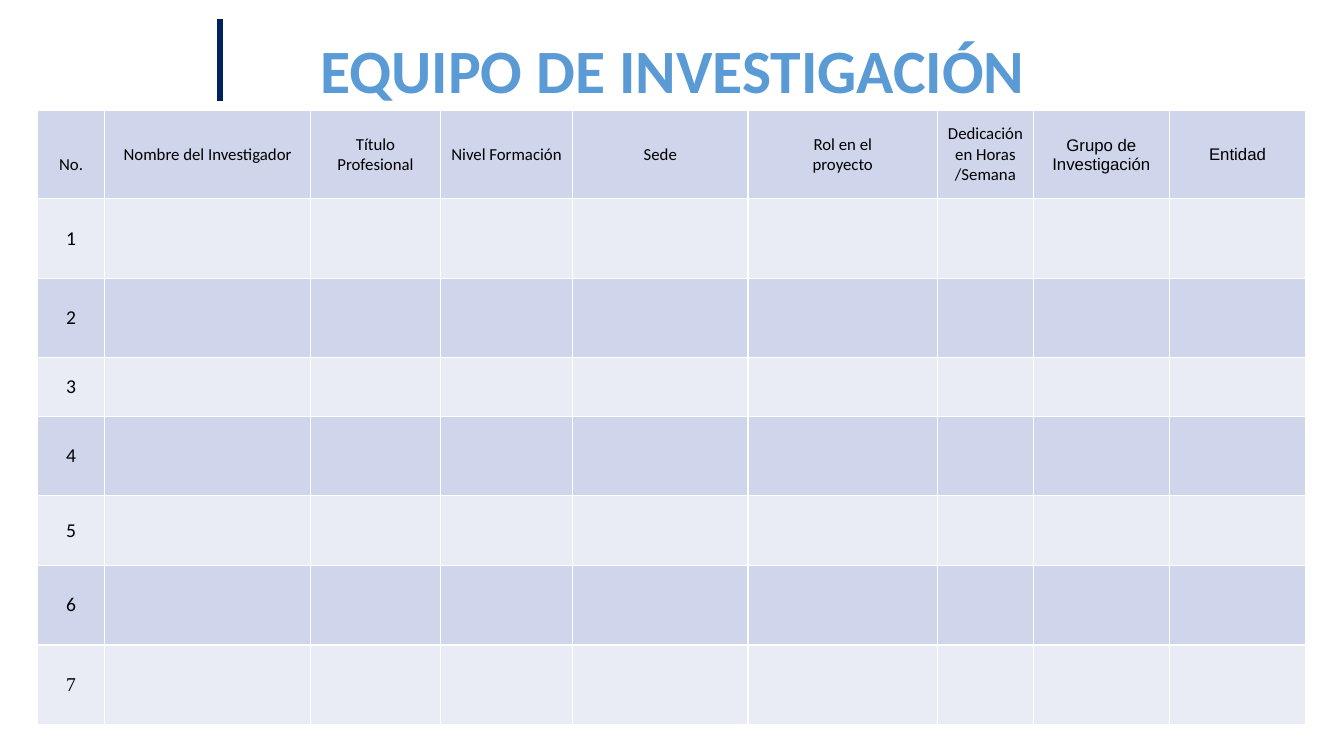
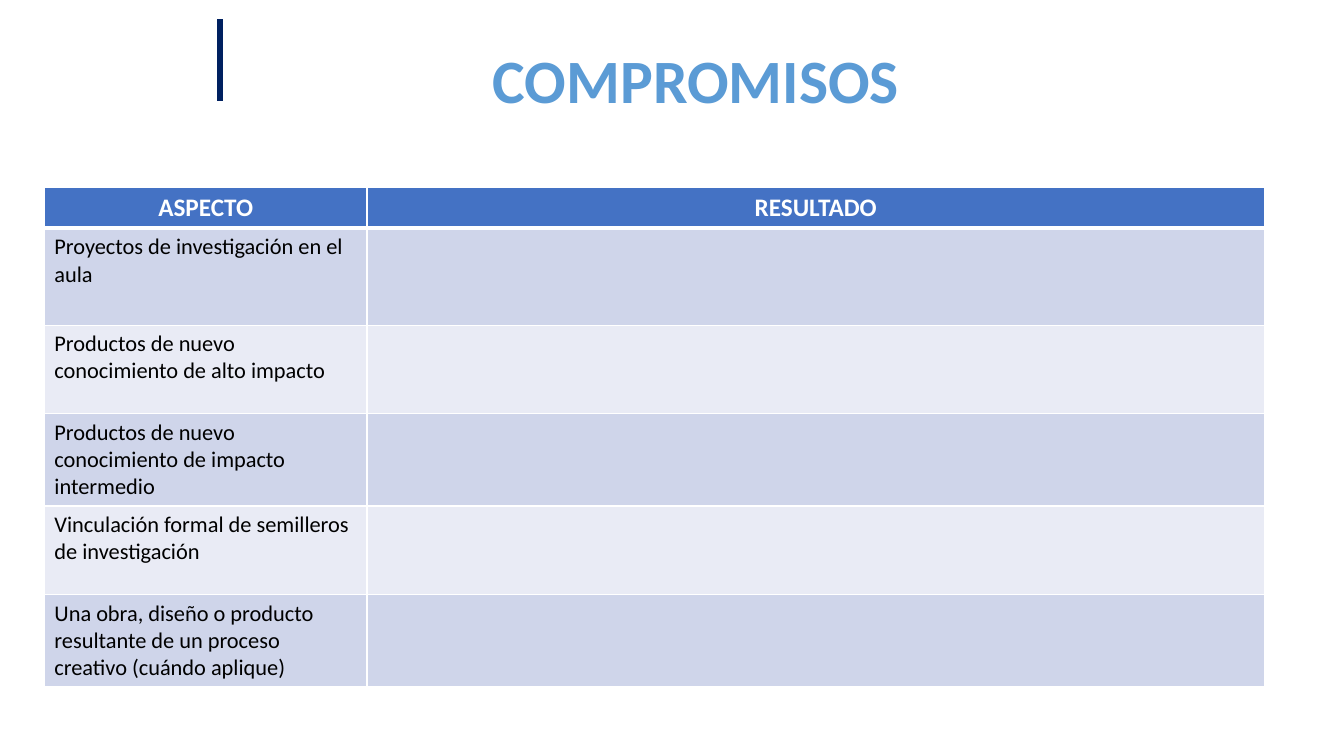
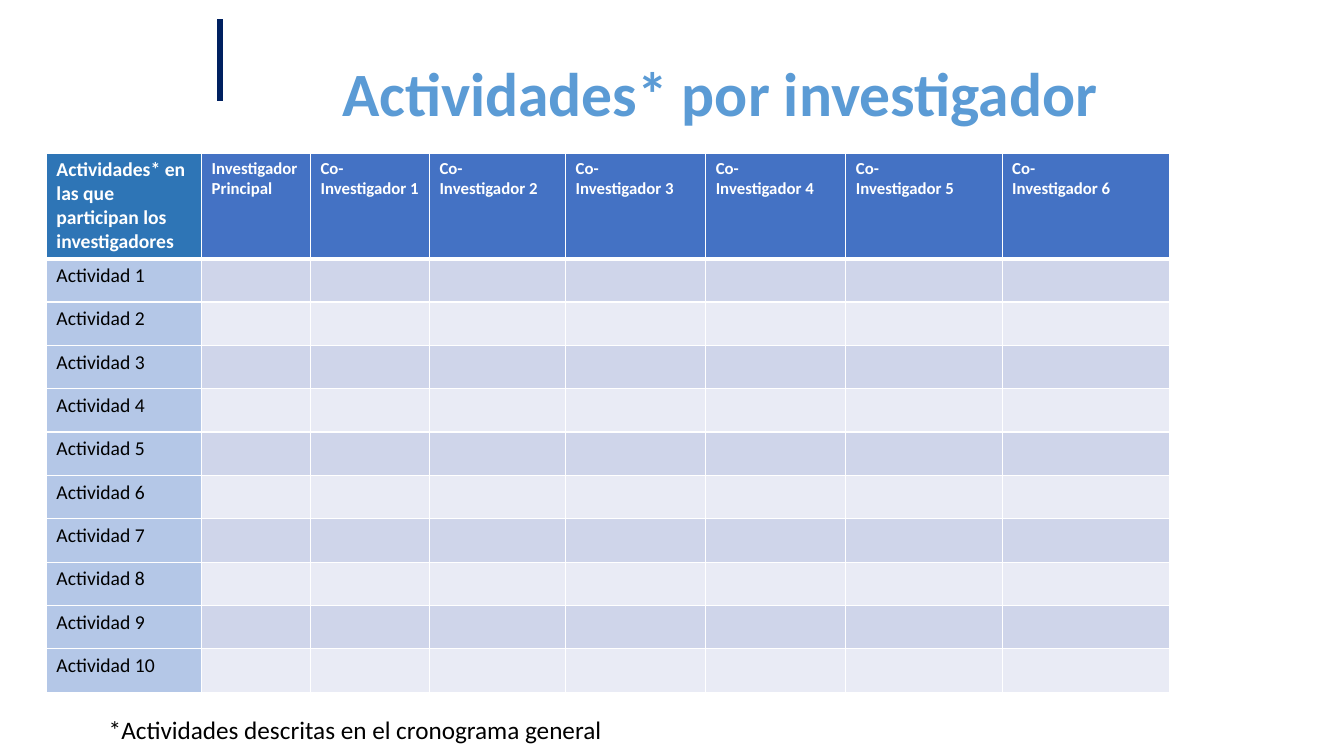
from lxml import etree
from pptx import Presentation
from pptx.dml.color import RGBColor
from pptx.enum.shapes import MSO_CONNECTOR
from pptx.enum.text import MSO_ANCHOR, MSO_AUTO_SIZE, PP_ALIGN
from pptx.oxml.ns import qn
from pptx.util import Inches, Pt

STRAIGHT = MSO_CONNECTOR.STRAIGHT
MIDDLE, TOP = MSO_ANCHOR.MIDDLE, MSO_ANCHOR.TOP
CENTER, LEFT = PP_ALIGN.CENTER, PP_ALIGN.LEFT
NO_AUTOSIZE = MSO_AUTO_SIZE.NONE

# Shared palette and text formats
WHITE, BLACK, NAVY, SKY = "FFFFFF", "000000", "002060", "5B9BD5"
BLUE, DEEP_BLUE, PALE_BLUE = "4472C4", "2E75B6", "B4C7E7"
DARK_BAND, LIGHT_BAND = "CFD5EA", "E9EBF5"
BODY = {"name": "Calibri", "size": Pt(14), "bold": False}
TITLE = {"name": "Calibri", "size": Pt(44), "bold": True}


def rgb(value):
    return RGBColor.from_string(value)


def write(frame, text, font_format, color, align=LEFT):
    """Write one paragraph per line of text and format its runs."""
    frame.text = text
    for paragraph in frame.paragraphs:
        paragraph.alignment = align
        for run in paragraph.runs:
            for attribute, value in font_format.items():
                setattr(run.font, attribute, value)
            run.font.color.rgb = rgb(color)


# Content of each slide; "special" holds font changes by (row, column)
team = {
    "title": "EQUIPO DE INVESTIGACIÓN",
    "title_box": (2.87, 0.26, 7.61, 0.84),
    "table_at": (0.37, 1.1),
    "columns": [0.67, 2.04, 1.29, 1.31, 1.74, 1.88, 0.95, 1.35, 1.35],
    "rows": [0.87, 0.79, 0.79, 0.58, 0.79, 0.69, 0.79, 0.79],
    "header": ["No.", "Nombre del Investigador", "Título Profesional",
               "Nivel Formación", "Sede", "Rol en el\nproyecto",
               "Dedicación en Horas /Semana", "Grupo de Investigación",
               "Entidad"],
    "labels": [str(number) for number in range(1, 8)],
    "header_font": {**BODY, "size": Pt(12)}, "header_color": BLACK,
    "header_fill": DARK_BAND, "header_rule": 1, "header_align": CENTER,
    "label_font": BODY, "label_align": CENTER,
    "bands": (LIGHT_BAND, DARK_BAND),
    "anchor": MIDDLE, "margins": (0.07, 0),
    "special": {(0, 7): {"name": "Arial"}, (0, 8): {"name": "Arial"},
                (7, 0): {"name": "Times New Roman"}},
    "fills": {},
}
commitments = {
    "title": "COMPROMISOS",
    "title_box": (3.1, 0.36, 7.61, 0.84),
    "table_at": (0.44, 1.86),
    "columns": [3.2, 8.9],
    "rows": [0.38, 0.96] + [0.88] * 4,
    "header": ["ASPECTO", "RESULTADO"],
    "labels": ["Proyectos de investigación en el aula",
               "Productos de nuevo conocimiento de alto impacto",
               "Productos de nuevo conocimiento de impacto intermedio",
               "Vinculación formal de semilleros de investigación",
               "Una obra, diseño o producto resultante de un proceso "
               "creativo (cuándo aplique)"],
    "header_font": {**BODY, "size": Pt(18), "bold": True},
    "header_color": WHITE,
    "header_fill": BLUE, "header_rule": 3, "header_align": CENTER,
    "label_font": {**BODY, "size": Pt(16)}, "label_align": LEFT,
    "bands": (DARK_BAND, LIGHT_BAND),
    "anchor": TOP, "margins": (0.1, 0.05),
    "special": {},
    "fills": {},
}
activities = {
    "title": "Actividades* por investigador",
    "title_box": (2.93, 0.49, 8.43, 0.84),
    "table_at": (0.46, 1.52),
    "columns": [1.54, 1.08, 1.18, 1.35, 1.39, 1.39, 1.55, 1.66],
    "rows": [0.85] + [0.43] * 10,
    "header": ["Actividades* en las que participan los investigadores",
               "Investigador Principal"]
              + [f"Co-\nInvestigador {number}" for number in range(1, 7)],
    "labels": [f"Actividad {number}" for number in range(1, 11)],
    "header_font": {**BODY, "size": Pt(12), "bold": True},
    "header_color": WHITE,
    "header_fill": BLUE, "header_rule": 3, "header_align": LEFT,
    "label_font": BODY, "label_align": LEFT,
    "bands": (DARK_BAND, LIGHT_BAND),
    "anchor": TOP, "margins": (0.1, 0.05),
    "special": {(0, 0): {"size": Pt(14)}},
    "fills": {(0, 0): DEEP_BLUE,
              **{(row, 0): PALE_BLUE for row in range(1, 11)}},
}

deck = Presentation()
deck.slide_width, deck.slide_height = Inches(13.33), Inches(7.5)
title_only = deck.slide_layouts[5]

for content in (team, commitments, activities):
    slide = deck.slides.add_slide(title_only)

    # Title with a thin white outline
    heading = slide.shapes.title
    heading.left, heading.top, heading.width, heading.height = map(
        Inches, content["title_box"])
    write(heading.text_frame, content["title"], TITLE, SKY, CENTER)
    heading.text_frame.auto_size = NO_AUTOSIZE
    run_format = heading.text_frame.paragraphs[0].runs[0].font
    outline = etree.Element(qn("a:ln"), w=str(Pt(0.75)))
    outline_fill = etree.SubElement(outline, qn("a:solidFill"))
    etree.SubElement(outline_fill, qn("a:srgbClr"), val=WHITE)
    heading.text_frame._txBody.find(".//" + qn("a:rPr")).insert(0, outline)

    # Table grid
    widths, heights = content["columns"], content["rows"]
    left, top = content["table_at"]
    table = slide.shapes.add_table(
        len(heights), len(widths), Inches(left), Inches(top),
        Inches(sum(widths)), Inches(sum(heights))).table
    for column, width in zip(table.columns, widths):
        column.width = Inches(width)
    for row, height in zip(table.rows, heights):
        row.height = Inches(height)

    # Cells: borders, fill and text
    for r in range(len(heights)):
        for c in range(len(widths)):
            cell = table.cell(r, c)
            rules = {"lnL": 1, "lnR": 1,
                     "lnT": content["header_rule"] if r == 1 else 1,
                     "lnB": content["header_rule"] if r == 0 else 1}
            cell_properties = cell._tc.get_or_add_tcPr()
            for side, points in rules.items():
                border = etree.SubElement(cell_properties, qn(f"a:{side}"),
                                          w=str(Pt(points)))
                border_fill = etree.SubElement(border, qn("a:solidFill"))
                etree.SubElement(border_fill, qn("a:srgbClr"), val=WHITE)

            band = content["header_fill"] if r == 0 else content["bands"][(r - 1) % 2]
            cell.fill.solid()
            cell.fill.fore_color.rgb = rgb(content["fills"].get((r, c), band))

            if r > 0 and c > 0:
                continue
            part = "header" if r == 0 else "label"
            text = content["header"][c] if r == 0 else content["labels"][r - 1]
            font_format = {**content[f"{part}_font"],
                           **content["special"].get((r, c), {})}
            color = content["header_color"] if r == 0 else BLACK
            write(cell.text_frame, text, font_format, color,
                  content[f"{part}_align"])
            side_margin, edge_margin = map(Inches, content["margins"])
            cell.margin_left = cell.margin_right = side_margin
            cell.margin_top = cell.margin_bottom = edge_margin
            cell.vertical_anchor = content["anchor"]

    # "No." sits one line lower than the other team headings
    if content is team:
        table.cell(0, 0).margin_top = Inches(0.2)

# Footnote of the activities slide
footnote = slide.shapes.add_textbox(
    Inches(0.98), Inches(7.04), Inches(5.28), Inches(0.4))
footnote.text_frame.word_wrap = True
write(footnote.text_frame, "*Actividades descritas en el cronograma general",
      {**BODY, "size": Pt(18)}, BLACK)

# Vertical accent, moved to the layout so that every slide shows it
accent = slide.shapes.add_connector(
    STRAIGHT, Inches(2.18), Inches(0.19), Inches(2.18), Inches(1))
accent.line.color.rgb = rgb(NAVY)
accent.line.width = Pt(4.5)
etree.SubElement(accent.element.spPr, qn("a:effectLst"))
title_only.shapes.element.append(accent.element)

deck.save("out.pptx")
